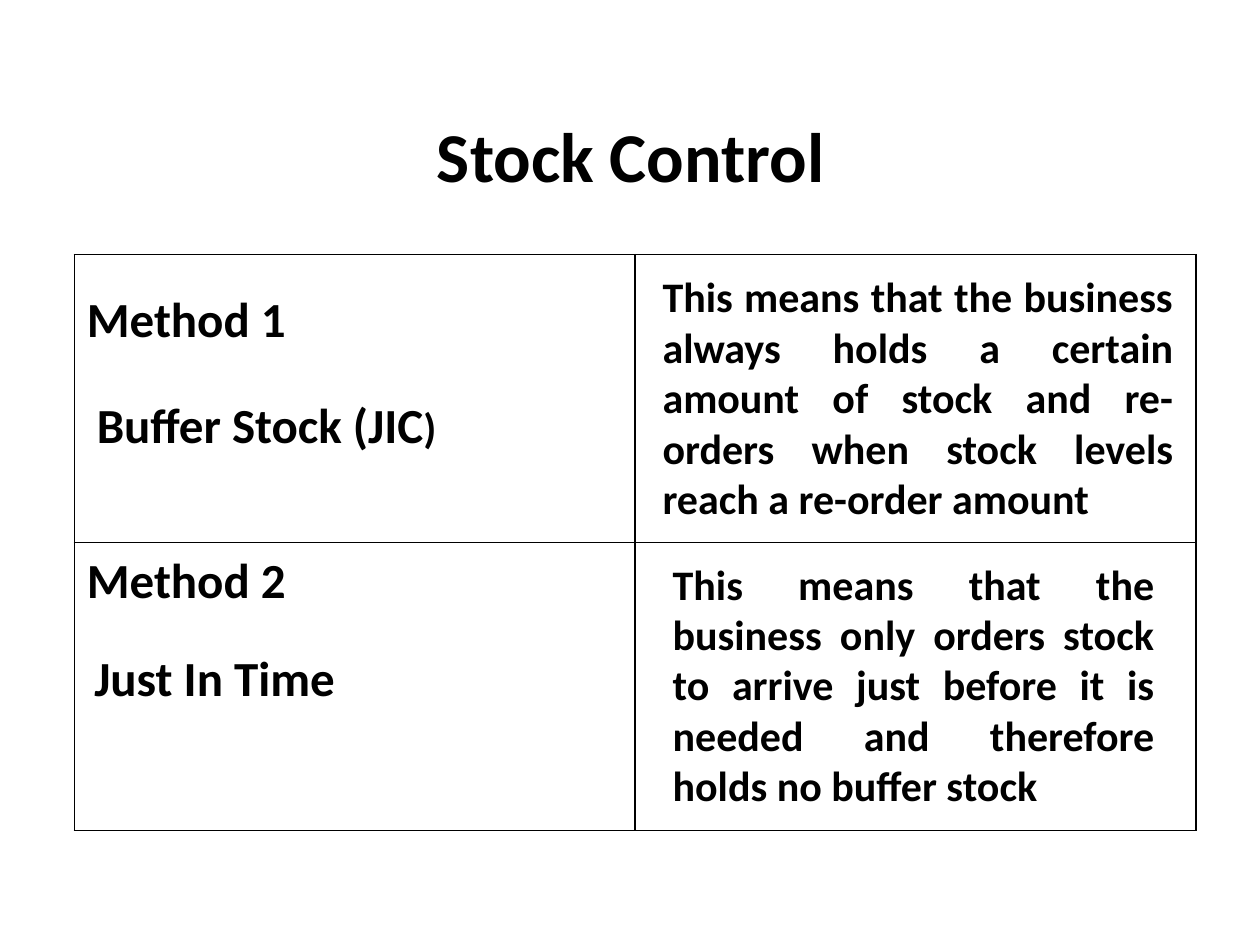
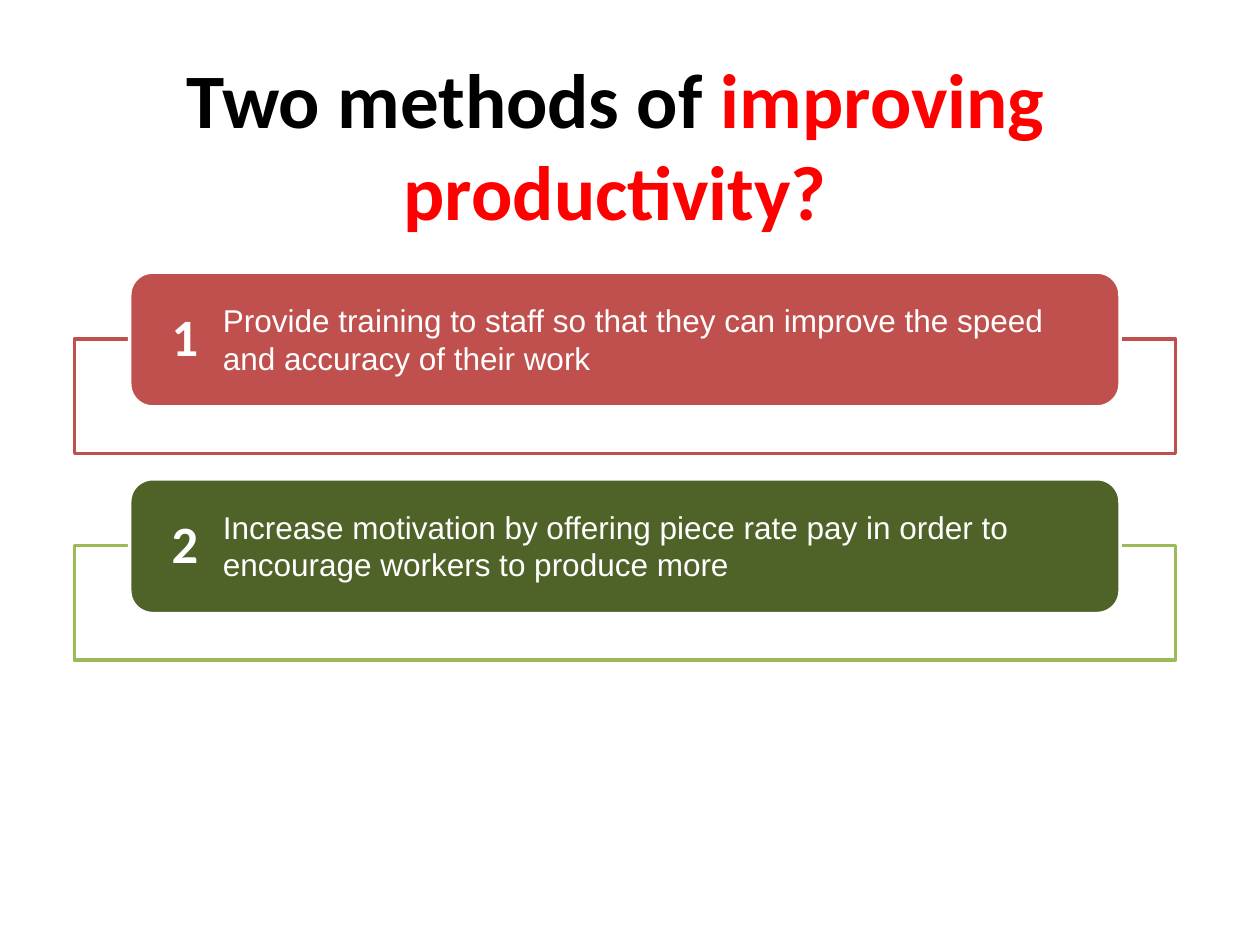
from lxml.etree import SubElement
from pptx import Presentation
from pptx.dml.color import RGBColor as RGB
from pptx.enum.shapes import MSO_SHAPE as SHAPE
from pptx.enum.text import MSO_ANCHOR as ANCHOR, MSO_AUTO_SIZE as FIT, PP_ALIGN as ALIGN
from pptx.oxml.ns import qn
from pptx.util import Inches, Pt

COLORS = {"ink": "000000", "paper": "FFFFFF", "key": "FF0000",
          "red": "C0504D", "lime": "9BBB59", "green": "4F6228"}


class Deck:
    def __init__(self):
        self.prs = Presentation()
        self.prs.slide_width, self.prs.slide_height = Inches(10), Inches(7.5)
        self.slide = None

    def page(self):
        self.slide = self.prs.slides.add_slide(self.prs.slide_layouts[6])

    def style(self, run, size, color="ink", bold=True, face="Calibri"):
        font = run.font
        font.name, font.size, font.bold = face, Pt(size), bold
        font.color.rgb = RGB.from_string(COLORS[color])

    def text(self, box, words, size, align=ALIGN.LEFT, **look):
        frame = self.slide.shapes.add_textbox(*map(Inches, box)).text_frame
        frame.word_wrap = True
        frame.auto_size = FIT.SHAPE_TO_FIT_TEXT
        frame.text = words
        para = frame.paragraphs[0]
        para.alignment = align
        self.style(para.runs[0], size, **look)
        return para

    def extend(self, para, words, size, color="ink"):
        run = para.add_run()
        run.text = words
        self.style(run, size, color)

    def shape(self, kind, box, fill, line):
        item = self.slide.shapes.add_shape(kind, *map(Inches, box))
        item.shadow.inherit = False
        item.fill.solid()
        item.fill.fore_color.rgb = RGB.from_string(COLORS[fill])
        item.line.color.rgb = RGB.from_string(COLORS[line])
        item.line.width = Pt(2)
        return item

    def border(self, cell):
        props = cell._tc.get_or_add_tcPr()
        for side in ("a:lnL", "a:lnR", "a:lnT", "a:lnB"):
            line = SubElement(props, qn(side), w=str(Pt(1)))
            fill = SubElement(line, qn("a:solidFill"))
            SubElement(fill, qn("a:srgbClr"), val=COLORS["ink"])

    def table(self, box, heads, tops):
        grid = self.slide.shapes.add_table(len(heads), 2, *map(Inches, box)).table
        grid.first_row = grid.horz_banding = False
        for cell in grid.iter_cells():
            self.border(cell)
            cell.fill.background()
        for row, (head, top) in enumerate(zip(heads, tops)):
            cell = grid.cell(row, 0)
            cell.margin_left, cell.margin_right = Inches(0.1), Inches(0.07)
            cell.margin_top, cell.margin_bottom = Inches(top), 0
            cell.text_frame.text = head
            para = cell.text_frame.paragraphs[0]
            para.line_spacing = 1.15
            self.style(para.runs[0], 28)

    def card(self, top, mark, words, fill, line):
        self.shape(SHAPE.RECTANGLE, (0.59, top + 0.53, 8.74, 0.91), "paper", line)
        bar = self.shape(SHAPE.ROUNDED_RECTANGLE, (1.03, top, 7.86, 1.07), fill, "paper")
        bar.adjustments[0] = 0.17
        frame = bar.text_frame
        frame.margin_left = frame.margin_right = Inches(0.28)
        frame.vertical_anchor = ANCHOR.MIDDLE
        frame.text = mark
        para = frame.paragraphs[0]
        para.alignment, para.line_spacing = ALIGN.LEFT, 0.9
        self.style(para.runs[0], 30, "paper")
        self.text((1.67, top + 0.18, 6.72, 0.71), words, 18,
                  color="paper", bold=False, face="Arial")


def main():
    deck = Deck()

    # Stock control methods
    deck.page()
    deck.text((0.28, 0.84, 9.45, 0.77), "Stock Control", 40, ALIGN.CENTER)
    deck.table((0.59, 2.02, 8.9, 4.57), ("Method 1", "Method 2"), (0.22, 0))
    name = deck.text((0.67, 3.08, 4.17, 0.57), "Buffer Stock (JIC", 28)
    deck.extend(name, ")", 24)
    deck.text((0.65, 5.09, 4.17, 0.57), "Just In Time", 28)
    deck.text((5.16, 2.1, 4.25, 2.12),
              "This means that the business always holds a certain amount of stock "
              "and re-orders when stock levels reach a re-order amount",
              24, ALIGN.JUSTIFY)
    deck.text((5.24, 4.38, 4.02, 2.12),
              "This means that the business only orders stock to arrive just before "
              "it is needed and therefore holds no buffer stock",
              24, ALIGN.JUSTIFY)

    # Productivity methods
    deck.page()
    title = deck.text((0.2, 0.36, 9.37, 1.58), "Two methods of ", 44, ALIGN.CENTER)
    deck.extend(title, "improving productivity?", 44, "key")
    cards = (
        ("Provide training to staff so that they can improve the speed "
         "and accuracy of their work", "red", "red"),
        ("Increase motivation by offering piece rate pay in order to "
         "encourage workers to produce more", "green", "lime"),
    )
    for i, (words, fill, line) in enumerate(cards):
        deck.card(2.16 + 1.64 * i, str(i + 1), words, fill, line)

    deck.prs.save("out.pptx")


if __name__ == "__main__":
    main()
